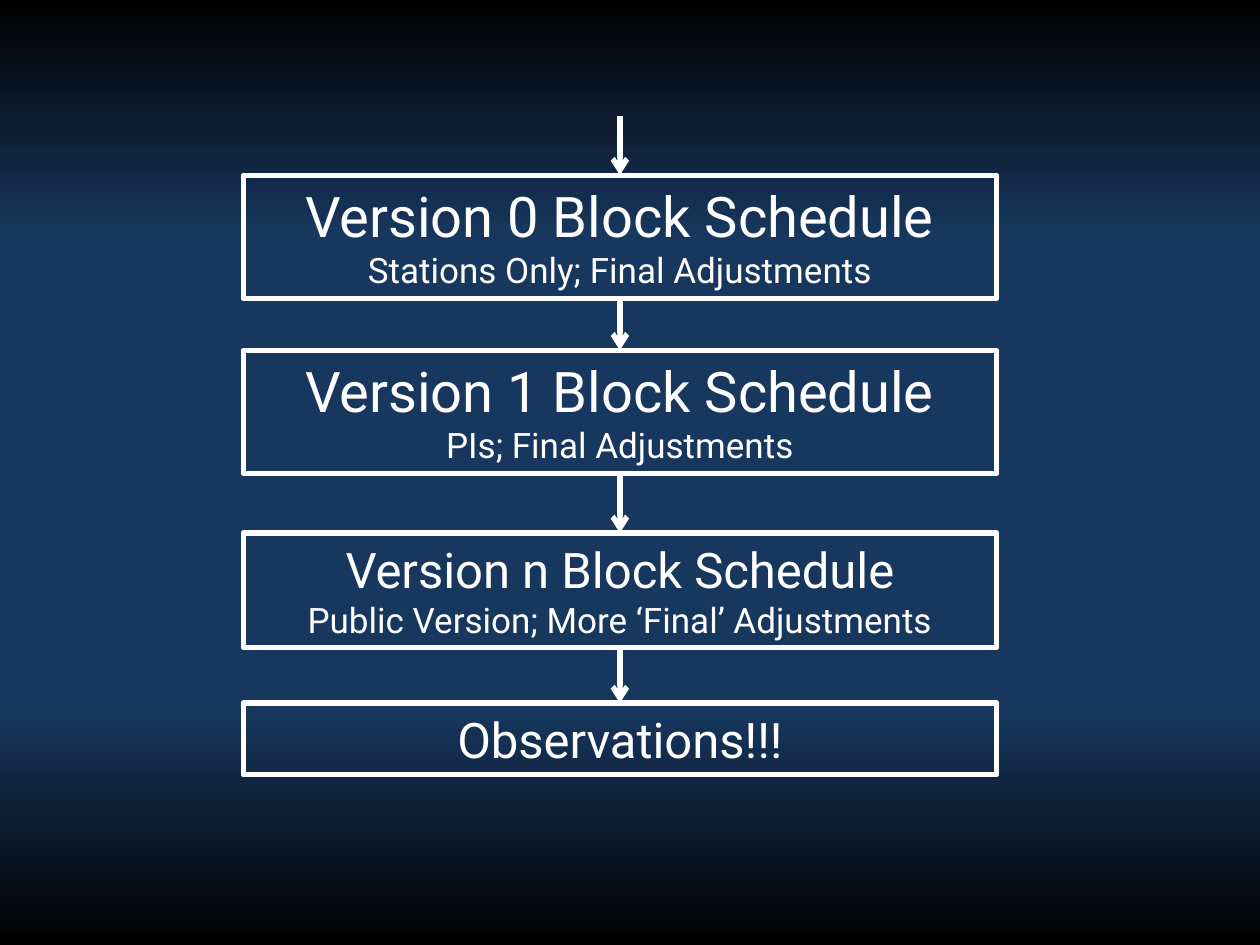
import pptx
import pptx.util
import pptx.dml.color
import pptx.enum.shapes
import pptx.enum.text
import pptx.oxml.ns
from lxml import etree

Inches = pptx.util.Inches
RGBColor = pptx.dml.color.RGBColor
qn = pptx.oxml.ns.qn

WHITE = RGBColor(0xFF, 0xFF, 0xFF)
BLACK = RGBColor(0x00, 0x00, 0x00)
NAVY = RGBColor(0x17, 0x37, 0x5E)
FONT = "Roboto"

deck = pptx.Presentation()
deck.slide_width = Inches(10)
deck.slide_height = Inches(7.5)
page = deck.slides.add_slide(deck.slide_layouts[6])

# Background: navy band fading to black at top and bottom
fill = page.background.fill
fill.gradient()
fill.gradient_angle = 270
stops = page.element.find(".//" + qn("a:gsLst"))
for stop in list(stops):
    stops.remove(stop)
for percent, color in [(0, BLACK), (25, NAVY), (75, NAVY), (100, BLACK)]:
    stop = etree.SubElement(stops, qn("a:gs"), pos=str(percent * 1000))
    etree.SubElement(stop, qn("a:srgbClr"), val=str(color))

# Steps: top, height, title, title size, subtitle
LEFT, WIDTH = 1.93, 5.98
CENTER = LEFT + WIDTH / 2
steps = [
    (1.39, 0.98, "Version 0 Block Schedule", 32, "Stations Only; Final Adjustments"),
    (2.78, 0.98, "Version 1 Block Schedule", 32, "PIs; Final Adjustments"),
    (4.23, 0.91, "Version n Block Schedule", 28, "Public Version; More ‘Final’ Adjustments"),
    (5.58, 0.57, "Observations!!!", 28, None),
]

previous = None
for top, height, title, title_size, subtitle in steps:
    # Outlined box
    box = page.shapes.add_shape(
        pptx.enum.shapes.MSO_SHAPE.RECTANGLE,
        Inches(LEFT), Inches(top), Inches(WIDTH), Inches(height))
    box.shadow.inherit = False
    box.fill.background()
    box.line.color.rgb = WHITE
    box.line.width = pptx.util.Pt(3)

    # Title and subtitle
    frame = box.text_frame
    frame.word_wrap = True
    frame.auto_size = pptx.enum.text.MSO_AUTO_SIZE.SHAPE_TO_FIT_TEXT
    frame.vertical_anchor = pptx.enum.text.MSO_ANCHOR.TOP
    lines = [(title, title_size)]
    if subtitle:
        lines.append((subtitle, 20))
    for index, (text, size) in enumerate(lines):
        para = frame.add_paragraph() if index else frame.paragraphs[0]
        para.alignment = pptx.enum.text.PP_ALIGN.CENTER
        span = para.add_run()
        span.text = text
        span.font.name = FONT
        span.font.size = pptx.util.Pt(size)
        span.font.color.rgb = WHITE

    # Arrow into the box, from the previous box when there is one
    arrow = page.shapes.add_connector(
        pptx.enum.shapes.MSO_CONNECTOR.STRAIGHT,
        Inches(CENTER), Inches(0.92), Inches(CENTER), Inches(top))
    if previous is not None:
        arrow.begin_connect(previous, 2)
    arrow.end_connect(box, 0)
    arrow.line.color.rgb = WHITE
    arrow.line.width = pptx.util.Pt(3)
    etree.SubElement(arrow.line._get_or_add_ln(), qn("a:tailEnd"), type="arrow")
    etree.SubElement(arrow._element.spPr, qn("a:effectLst"))
    previous = box

deck.save("out.pptx")
